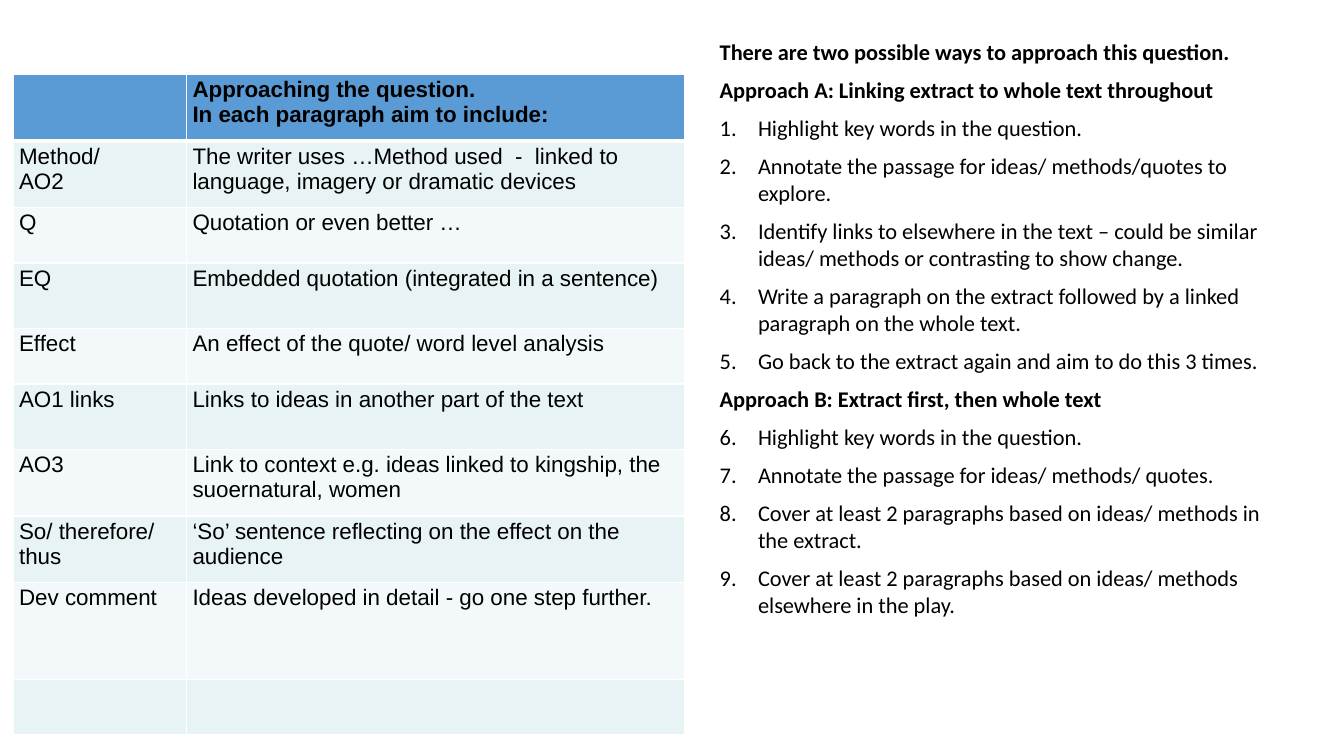
from dataclasses import dataclass

from lxml import etree
from pptx import Presentation
from pptx.dml.color import RGBColor
from pptx.enum.text import MSO_AUTO_SIZE
from pptx.oxml.ns import qn
from pptx.util import Inches, Pt

FIT_SHAPE = MSO_AUTO_SIZE.SHAPE_TO_FIT_TEXT
BLANK = 6


@dataclass(frozen=True)
class Theme:
    head: str = "5B9BD5"
    bands: tuple = ("E7F3F4", "F3F9FA")
    rule: str = "FFFFFF"
    ink: str = "000000"
    grid_font: str = "Arial"
    list_font: str = "Calibri"
    size: float = 16
    gap: float = 8
    thin: float = 1
    thick: float = 3


THEME = Theme()

COLS = (1.72, 4.94)
# Row height, then the text of both cells
ROWS = [
    (0.66, "", "Approaching the question.\nIn each paragraph aim to include:"),
    (0.66, "Method/\nAO2", "The writer uses …Method used  -  linked to "
     "language, imagery or dramatic devices"),
    (0.55, "Q", "Quotation or even better …"),
    (0.65, "EQ", "Embedded quotation (integrated in a sentence)"),
    (0.55, "Effect", "An effect of the quote/ word level analysis"),
    (0.65, "AO1 links", "Links to ideas in another part of the text"),
    (0.66, "AO3", "Link to context e.g. ideas linked to kingship, the "
     "suoernatural, women"),
    (0.66, "So/ therefore/ thus",
     "‘So’ sentence reflecting on the effect on the audience"),
    (0.96, "Dev comment", "Ideas developed in detail - go one step further."),
    (0.55, "", ""),
]

INTRO = "There are two possible ways to approach this question."
PLANS = [
    ("Approach A: Linking extract to whole text throughout", [
        "Highlight key words in the question.",
        "Annotate the passage for ideas/ methods/quotes to explore.",
        "Identify links to elsewhere in the text – could be similar ideas/ "
        "methods or contrasting to show change.",
        "Write a paragraph on the extract followed by a linked paragraph on "
        "the whole text.",
        "Go back to the extract again and aim to do this 3 times.",
    ]),
    ("Approach B: Extract first, then whole text", [
        "Highlight key words in the question.",
        "Annotate the passage for ideas/ methods/ quotes.",
        "Cover at least 2 paragraphs based on ideas/ methods in the extract.",
        "Cover at least 2 paragraphs based on ideas/ methods elsewhere in "
        "the play.",
    ]),
]


def style(para, face, bold):
    font = para.font
    font.name, font.size, font.bold = face, Pt(THEME.size), bold
    font.color.rgb = RGBColor.from_string(THEME.ink)


def add_rules(cell, top, base):
    """Draw the four borders of a cell; widths are in points."""
    props = cell._tc.get_or_add_tcPr()
    sides = {"L": THEME.thin, "R": THEME.thin, "T": top, "B": base}
    for spot, (side, width) in enumerate(sides.items()):
        line = etree.Element(qn(f"a:ln{side}"), w=str(Pt(width)))
        fill = etree.SubElement(line, qn("a:solidFill"))
        etree.SubElement(fill, qn("a:srgbClr"), val=THEME.rule)
        props.insert(spot, line)


def add_grid(slide, left, top, width, height):
    frame = slide.shapes.add_table(
        len(ROWS), len(COLS), Inches(left), Inches(top),
        Inches(width), Inches(height))
    grid = frame.table
    for col, wide in zip(grid.columns, COLS):
        col.width = Inches(wide)
    for r, (tall, *texts) in enumerate(ROWS):
        grid.rows[r].height = Inches(tall)
        shade = THEME.bands[(r - 1) % 2] if r else THEME.head
        for c, text in enumerate(texts):
            cell = grid.cell(r, c)
            cell.margin_left = cell.margin_right = Inches(0.06)
            cell.margin_top = cell.margin_bottom = Inches(0.03)
            cell.text = text
            for para in cell.text_frame.paragraphs:
                style(para, THEME.grid_font, r == 0)
            cell.fill.solid()
            cell.fill.fore_color.rgb = RGBColor.from_string(shade)
            add_rules(cell, THEME.thick if r == 1 else THEME.thin,
                      THEME.thick if r == 0 else THEME.thin)


def add_plans(slide, left, top, width, height):
    box = slide.shapes.add_textbox(
        Inches(left), Inches(top), Inches(width), Inches(height))
    frame = box.text_frame
    frame.word_wrap = True
    frame.auto_size = FIT_SHAPE

    # Headings have no number; steps count on through both plans
    lines = [(INTRO, None)]
    start = 1
    for head, steps in PLANS:
        lines.append((head, None))
        lines += [(step, start) for step in steps]
        start += len(steps)

    for i, (text, first) in enumerate(lines):
        para = frame.add_paragraph() if i else frame.paragraphs[0]
        para.text = text
        if i:
            para.space_before = Pt(THEME.gap)
        props = para._p.get_or_add_pPr()
        props.set("marL", str(Inches(0.38)))
        props.set("indent", str(Inches(-0.38)))
        if first:
            etree.SubElement(props, qn("a:buFont"), typeface="+mj-lt")
            etree.SubElement(props, qn("a:buAutoNum"),
                             type="arabicPeriod", startAt=str(first))
        else:
            etree.SubElement(props, qn("a:buNone"))
        style(para, THEME.list_font, first is None)


def main():
    deck = Presentation()
    deck.slide_width, deck.slide_height = Inches(13.33), Inches(7.5)
    slide = deck.slides.add_slide(deck.slide_layouts[BLANK])
    add_grid(slide, 0.13, 0.74, sum(COLS), sum(row[0] for row in ROWS))
    add_plans(slide, 7.04, 0.33, 5.86, 6.97)
    deck.save("out.pptx")


if __name__ == "__main__":
    main()
